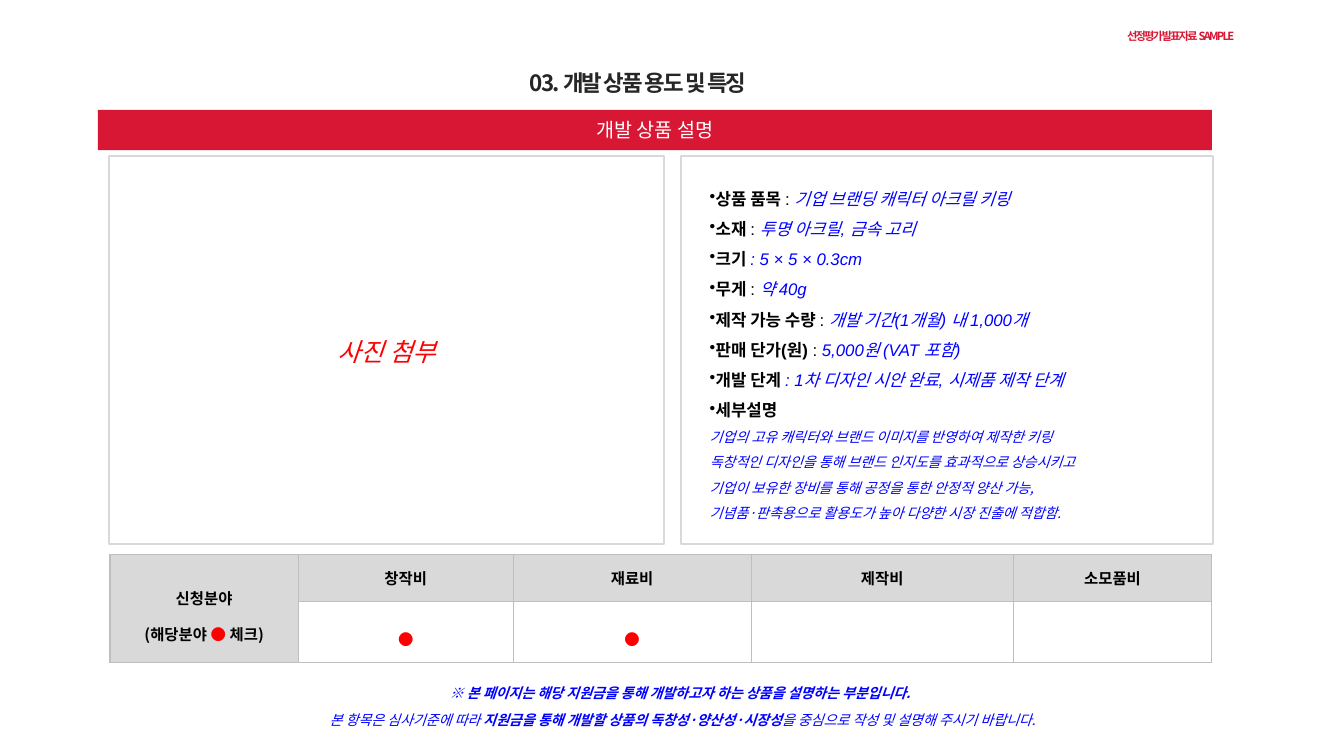
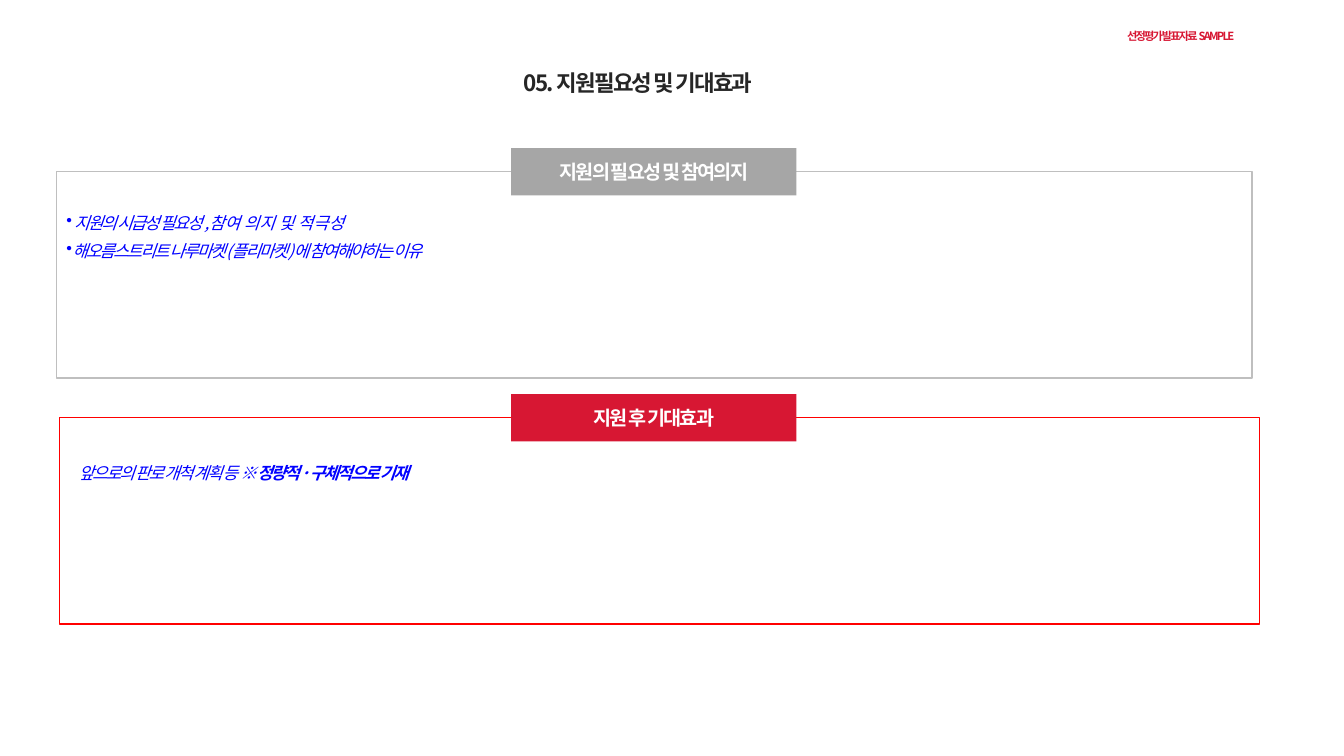
from lxml.etree import SubElement
from pptx import Presentation
from pptx.dml.color import RGBColor
from pptx.enum.shapes import MSO_SHAPE
from pptx.enum.text import MSO_ANCHOR, PP_ALIGN
from pptx.oxml.ns import qn
from pptx.util import Inches, Pt

COLORS = {
    "red": "D71733", "mark": "FF0000", "guide": "0000FF", "title": "262626",
    "black": "000000", "white": "FFFFFF", "head": "D9D9D9", "grid": "BFBFBF",
    "gray": "A6A6A6",
}
KOREAN = "Noto Sans CJK KR"
TIGHT = -130
PLAIN = {"size": 12, "name": KOREAN, "color": "black", "bold": False, "italic": False, "spacing": 0}
TAG = {**PLAIN, "size": 8, "color": "red", "bold": True, "spacing": TIGHT}
TITLE = {**TAG, "size": 16, "color": "title"}
BAND = {**PLAIN, "size": 14, "color": "white"}
LABEL_BAND = {**BAND, "bold": True, "spacing": TIGHT}
PHOTO = {**PLAIN, "size": 18, "color": "mark", "italic": True}
ITEM = {**PLAIN, "name": "Arial"}
ITEM_LABEL = {**ITEM, "bold": True}
ITEM_VALUE = {**ITEM, "color": "guide", "italic": True}
GUIDE = {**PLAIN, "size": 10, "color": "guide", "italic": True}
GUIDE_BOLD = {**GUIDE, "bold": True}
ANSWER = {**GUIDE, "size": 12, "spacing": TIGHT}
ANSWER_BOLD = {**ANSWER, "bold": True}
CELL = {**PLAIN, "size": 11, "bold": True}
CHECK = {**CELL, "color": "mark", "bold": False}

PRODUCT = [
    ("상품 품목", " : ", "기업 브랜딩 캐릭터 아크릴 키링"),
    ("소재", " : ", "투명 아크릴, 금속 고리"),
    ("크기 ", "", ": 5 × 5 × 0.3cm"),
    ("무게", " : ", "약 40g"),
    ("제작 가능 수량", " : ", "개발 기간(1개월) 내 1,000개"),
    ("판매 단가(원)", " : ", "5,000원 (VAT 포함)"),
    ("개발 단계 ", "", ": 1차 디자인 시안 완료, 시제품 제작 단계"),
    ("세부설명", "", ""),
]
DETAILS = [
    "기업의 고유 캐릭터와 브랜드 이미지를 반영하여 제작한 키링",
    "독창적인 디자인을 통해 브랜드 인지도를 효과적으로 상승시키고",
    "기업이 보유한 장비를 통해 공정을 통한 안정적 양산 가능,",
    "기념품·판촉용으로 활용도가 높아 다양한 시장 진출에 적합함.",
]
EXPENSES = [("창작비", True), ("재료비", True), ("제작비", False), ("소모품비", False)]


def color(key):
    return RGBColor.from_string(COLORS[key])


def add_run(paragraph, words, style):
    run = paragraph.add_run()
    run.text = words
    values = {**style, "size": Pt(style["size"])}
    for key in ("size", "name", "bold", "italic"):
        setattr(run.font, key, values[key])
    run.font.color.rgb = color(style["color"])
    properties = run.font._element
    properties.set("spc", str(style["spacing"]))
    east_asian = SubElement(properties, qn("a:ea"))
    east_asian.set("typeface", KOREAN)


def write(frame, paragraphs, align=PP_ALIGN.CENTER, spacing=1.0, bullets=0, indent=0):
    for index, runs in enumerate(paragraphs):
        paragraph = frame.paragraphs[0] if index == 0 else frame.add_paragraph()
        paragraph.alignment = align
        paragraph.line_spacing = spacing
        properties = paragraph._p.get_or_add_pPr()
        properties.set("marL", str(Inches(indent)))
        properties.set("indent", str(-Inches(indent)))
        if index < bullets:
            SubElement(properties, qn("a:buChar")).set("char", "•")
        for words, style in runs:
            if words:
                add_run(paragraph, words, style)


def set_frame(frame, anchor, insets=(0.1, 0.05, 0.1, 0.05), wrap=True):
    left, top, right, bottom = map(Inches, insets)
    values = {
        "word_wrap": wrap, "vertical_anchor": anchor, "margin_left": left,
        "margin_top": top, "margin_right": right, "margin_bottom": bottom,
    }
    for key, value in values.items():
        setattr(frame, key, value)


def add_text(slide, box, paragraphs, anchor=MSO_ANCHOR.TOP, insets=(0.1, 0.05, 0.1, 0.05),
             wrap=True, **layout):
    frame = slide.shapes.add_textbox(*map(Inches, box)).text_frame
    set_frame(frame, anchor, insets, wrap)
    write(frame, paragraphs, **layout)


def add_box(slide, box, fill=None, line=None, width=1):
    rectangle = slide.shapes.add_shape(MSO_SHAPE.RECTANGLE, *map(Inches, box))
    rectangle.shadow.inherit = False
    if fill:
        rectangle.fill.solid()
        rectangle.fill.fore_color.rgb = color(fill)
    else:
        rectangle.fill.background()
    if line:
        rectangle.line.color.rgb = color(line)
        rectangle.line.width = Pt(width)
    else:
        rectangle.line.fill.background()
    return rectangle


def add_band(slide, box, fill, words, style):
    frame = add_box(slide, box, fill).text_frame
    set_frame(frame, MSO_ANCHOR.MIDDLE)
    write(frame, [[(words, style)]])


def add_answer_box(slide, box, line, insets, paragraphs, **layout):
    frame = add_box(slide, box, "white", line).text_frame
    set_frame(frame, MSO_ANCHOR.TOP, insets)
    write(frame, paragraphs, align=PP_ALIGN.LEFT, **layout)


def style_cell(cell, fill=None):
    properties = cell._tc.get_or_add_tcPr()
    for side in ("lnL", "lnR", "lnT", "lnB"):
        border = SubElement(properties, qn(f"a:{side}"), w=str(Pt(1)))
        solid = SubElement(border, qn("a:solidFill"))
        SubElement(solid, qn("a:srgbClr"), val=COLORS["grid"])
    if fill:
        cell.fill.solid()
        cell.fill.fore_color.rgb = color(fill)
    else:
        cell.fill.background()
    cell.vertical_anchor = MSO_ANCHOR.MIDDLE
    for side in ("left", "right", "top", "bottom"):
        setattr(cell, f"margin_{side}", Inches(0.01))


def add_expense_table(slide):
    widths, heights = [1.87, 2.13, 2.36, 2.6, 1.97], [0.47, 0.56 + 0.01]
    box = (1.09, 5.5, sum(widths), sum(heights))
    table = slide.shapes.add_table(2, len(widths), *map(Inches, box)).table
    table.first_row = table.horz_banding = False
    for column, width in zip(table.columns, widths):
        column.width = Inches(width)
    for row, height in zip(table.rows, heights):
        row.height = Inches(height)
    field = table.cell(0, 0)
    field.merge(table.cell(1, 0))
    for cell in (field, table.cell(1, 0)):
        style_cell(cell, "head")
    write(field.text_frame, [
        [("신청분야", CELL)],
        [("(해당분야 ", CELL), ("● ", CHECK), ("체크)", CELL)],
    ], spacing=1.6)
    for index, (expense, checked) in enumerate(EXPENSES, 1):
        heading, choice = table.cell(0, index), table.cell(1, index)
        style_cell(heading, "head")
        style_cell(choice)
        write(heading.text_frame, [[(expense, CELL)]])
        if checked:
            write(choice.text_frame, [[("●", CHECK)]], spacing=1.6)


def start_slide(deck, title):
    slide = deck.slides.add_slide(deck.slide_layouts[6])
    add_text(slide, (11, 0.24, 1.42, 0.24), [[("선정평가 발표자료 SAMPLE", TAG)]])
    add_text(slide, (2.65, 0.56, 7.36, 0.46), [[(title, TITLE)]], MSO_ANCHOR.MIDDLE,
             (0.12, 0.06, 0.12, 0.06), wrap=False, spacing=1.2, indent=0.45)
    return slide


def build_product(deck):
    slide = start_slide(deck, "03. 개발 상품 용도 및 특징")
    add_band(slide, (0.97, 1.09, 11.05, 0.4), "red", "개발 상품 설명", BAND)
    for left, width in ((1.08, 5.51), (6.75, 5.28)):
        add_box(slide, (left, 1.55, width, 3.85), line="head", width=1.5)
    add_text(slide, (1.08, 3.29, 5.51, 0.4), [[("사진 첨부", PHOTO)]])
    add_expense_table(slide)
    items = [list(zip(parts, (ITEM_LABEL, ITEM, ITEM_VALUE))) for parts in PRODUCT]
    details = [[(sentence, GUIDE)] for sentence in DETAILS]
    add_text(slide, (6.94, 1.72, 4.07, 3.84), items + details,
             align=PP_ALIGN.LEFT, spacing=1.5, bullets=len(items))
    add_text(slide, (2.65, 7.01, 8.24, 0.27), [[
        ("본 항목은 심사기준에 따라 ", GUIDE),
        ("지원금을 통해 개발할 상품의 독창성·양산성·시장성", GUIDE_BOLD),
        ("을 중심으로 작성 및 설명해 주시기 바랍니다.", GUIDE),
    ]])
    add_text(slide, (3.93, 6.74, 5.63, 0.27), [[
        ("※ 본 페이지는 해당 지원금을 통해 개발하고자 하는 상품을 설명하는 부분입니다.", GUIDE_BOLD),
    ]])


def build_support(deck):
    slide = start_slide(deck, "05. 지원필요성 및 기대효과")
    add_answer_box(slide, (0.56, 1.7, 11.86, 2.05), "grid", (0.1, 0.33, 0.1, 0.05), [
        [(" 지원의 시급성 필요성 ,", ANSWER), ("참여 의지 및 적극성", {**ANSWER, "spacing": 0})],
        [("해오름스트리트 나루마켓(플리마켓)에 참여해야하는 이유", ANSWER)],
    ], spacing=1.4, bullets=2)
    add_answer_box(slide, (0.59, 4.14, 11.9, 2.05), "mark", (0.19, 0.45, 0.1, 0.05), [
        [("앞으로의 판로 개척 계획 등 ", ANSWER), ("※ 정량적·구체적으로 기재", ANSWER_BOLD)],
    ])
    for top, fill, words in ((1.47, "gray", "지원의 필요성 및 참여의지"),
                             (3.91, "red", "지원 후 기대효과")):
        add_band(slide, (5.07, top, 2.83, 0.47), fill, words, LABEL_BAND)


def main():
    deck = Presentation()
    deck.slide_width, deck.slide_height = Inches(13.33), Inches(7.5)
    build_product(deck)
    build_support(deck)
    deck.save("out.pptx")


if __name__ == "__main__":
    main()
